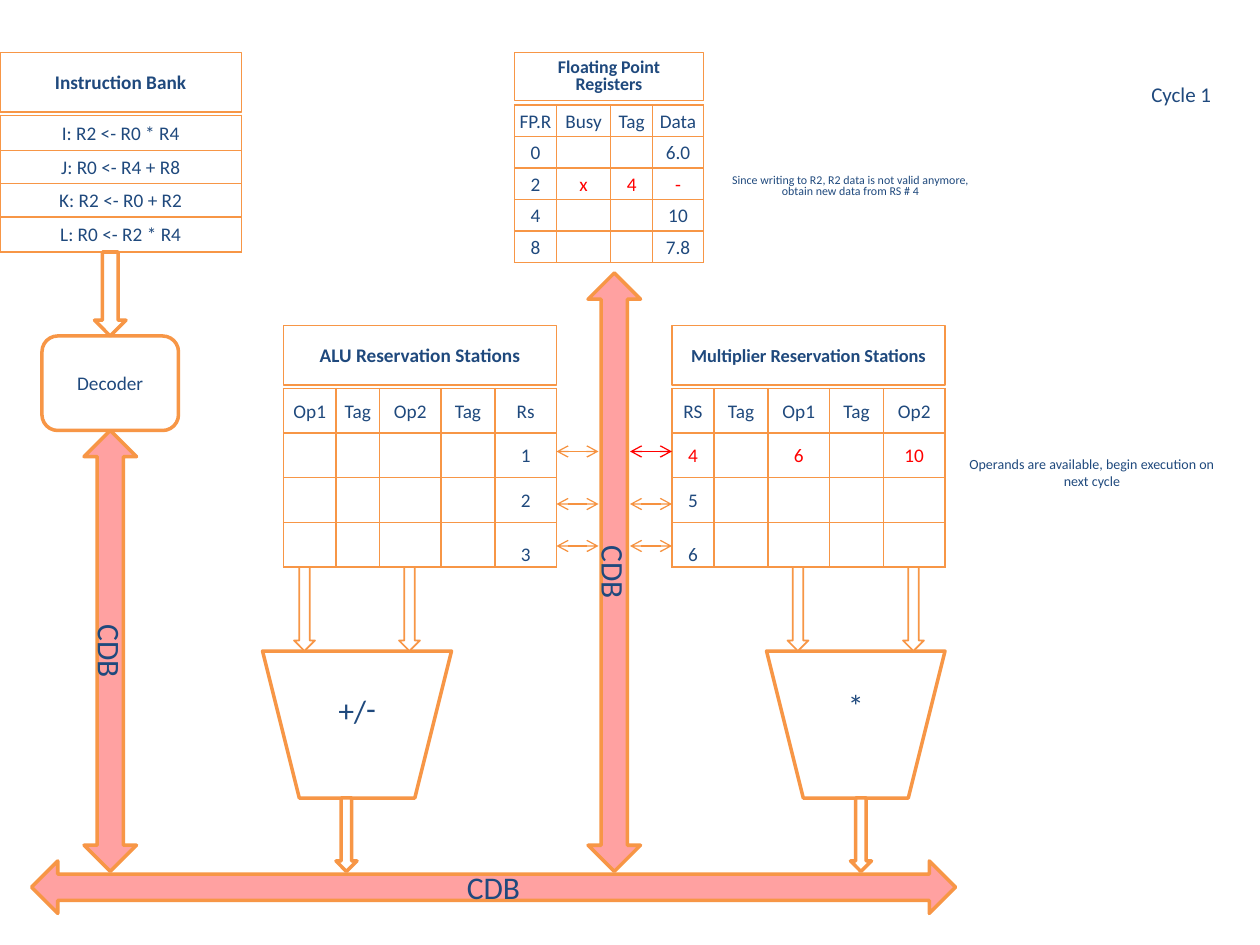
from lxml import etree
from pptx import Presentation
from pptx.dml.color import RGBColor
from pptx.enum.shapes import MSO_CONNECTOR, MSO_SHAPE
from pptx.enum.text import MSO_ANCHOR, PP_ALIGN
from pptx.oxml.ns import qn
from pptx.util import Pt

RECT = MSO_SHAPE.RECTANGLE
ROUNDED = MSO_SHAPE.ROUNDED_RECTANGLE
DOWN = MSO_SHAPE.DOWN_ARROW
DOUBLE_ARROW = MSO_SHAPE.LEFT_RIGHT_ARROW
TRAPEZOID = MSO_SHAPE.TRAPEZOID
STRAIGHT = MSO_CONNECTOR.STRAIGHT
MIDDLE, BOTTOM = MSO_ANCHOR.MIDDLE, MSO_ANCHOR.BOTTOM
CENTER = PP_ALIGN.CENTER

FONT = "Calibri"
COLORS = {"text": "1F497D", "border": "F79646", "link": "F69240",
          "active": "FF0000", "paper": "FFFFFF"}
CELL_MARGINS = {"margin_left": Pt(0.72), "margin_right": Pt(0.72),
                "margin_top": Pt(0.72), "margin_bottom": Pt(0)}
HEADER_HEIGHT = 34


def rgb(name):
    return RGBColor.from_string(COLORS[name])


def write(paragraph, text, size, color="text", bold=False, spacing=None):
    paragraph.alignment = CENTER
    paragraph.line_spacing = spacing
    run = paragraph.add_run()
    run.text = text
    run.font.color.rgb = rgb(color)
    style = {"name": FONT, "size": Pt(size), "bold": bold}
    for key, value in style.items():
        setattr(run.font, key, value)


def add_block(slide, kind, box, text="", size=11, weight=1, fill="paper",
              bold=False, spacing=None):
    block = slide.shapes.add_shape(kind, *map(Pt, box))
    block.shadow.inherit = False
    if fill:
        block.fill.solid()
        block.fill.fore_color.rgb = rgb(fill)
    else:
        block.fill.background()
    if weight:
        block.line.color.rgb = rgb("border")
        block.line.width = Pt(weight)
    else:
        block.line.fill.background()
    if text:
        frame = block.text_frame
        frame.word_wrap = True
        frame.vertical_anchor = MIDDLE
        write(frame.paragraphs[0], text, size, bold=bold, spacing=spacing)
    return block


def add_borders(cell):
    properties = cell._tc.get_or_add_tcPr()
    for position, side in enumerate(("lnL", "lnR", "lnT", "lnB")):
        edge = etree.Element(qn(f"a:{side}"), w=str(Pt(1)))
        paint = etree.SubElement(edge, qn("a:solidFill"))
        etree.SubElement(paint, qn("a:srgbClr"), val=COLORS["border"])
        properties.insert(position, edge)


def add_grid(slide, left, top, widths, heights, rows, active=(), low_row=None):
    box = (left, top, sum(widths), sum(heights))
    grid = slide.shapes.add_table(len(rows), len(widths), *map(Pt, box)).table
    grid.first_row = False
    grid.horz_banding = False
    for column, width in zip(grid.columns, widths):
        column.width = Pt(width)
    for r, (height, values) in enumerate(zip(heights, rows)):
        grid.rows[r].height = Pt(height)
        for c, value in enumerate(values):
            cell = grid.cell(r, c)
            for key, margin in CELL_MARGINS.items():
                setattr(cell, key, margin)
            cell.vertical_anchor = BOTTOM if r == low_row else MIDDLE
            cell.fill.background()
            add_borders(cell)
            paragraph = cell.text_frame.paragraphs[0]
            if value:
                color = "active" if (r, c) in active else "text"
                write(paragraph, value, 11, color)
            else:
                etree.SubElement(paragraph._p, qn("a:endParaRPr"), sz="1100")


def add_link(slide, left, y, width, color):
    link = slide.shapes.add_connector(
        STRAIGHT, Pt(left), Pt(y), Pt(left + width), Pt(y))
    link.line.color.rgb = rgb(color)
    link.line.width = Pt(0.75)
    outline = link.line._get_or_add_ln()
    for end in ("headEnd", "tailEnd"):
        etree.SubElement(outline, qn(f"a:{end}"), type="arrow")
    etree.SubElement(link._element.spPr, qn("a:effectLst"))


def add_bus(slide, box):
    left, top, width, height = box
    vertical = height > width
    if vertical:
        shift = (height - width) / 2
        box = (left - shift, top + shift, height, width)
    bus = add_block(slide, DOUBLE_ARROW, box, "CDB", 18, 2, "active")
    bus.rotation = 90 if vertical else 0
    tint = bus._element.spPr.find(qn("a:solidFill"))[0]
    etree.SubElement(tint, qn("a:alpha"), val="37000")


def add_instruction_path(slide, box):
    left, top, width, _ = box
    add_block(slide, RECT, (left, top, width, HEADER_HEIGHT),
              "Instruction Bank", bold=True)
    instructions = ["I: R2 <- R0 * R4", "J: R0 <- R4 + R8",
                    "K: R2 <- R0 + R2", "L: R0 <- R2 * R4"]
    add_grid(slide, left, top + 36, [width], [20, 19, 19, 20],
             [[instruction] for instruction in instructions])
    add_block(slide, ROUNDED, (left + 24, top + 162, 78, 54), "Decoder", weight=2)
    add_block(slide, DOWN, (left + 54, top + 114, 18, 48), weight=2, fill=None)


def add_registers(slide, box):
    left, top, width, _ = box
    add_block(slide, RECT, (left, top, width, 27.5), "Floating Point Registers",
              10.2, bold=True, spacing=0.8)
    rows = [["FP.R", "Busy", "Tag", "Data"], ["0", "", "", "6.0"],
            ["2", "x", "4", "-"], ["4", "", "", "10"], ["8", "", "", "7.8"]]
    add_grid(slide, left, top + 30, [24, 31, 24, 29], [18] * 5, rows,
             active={(2, 1), (2, 2), (2, 3)})


def add_stations(slide, box, title, size, widths, rows, link_offset, active_row=None):
    left, top, width, _ = box
    add_block(slide, RECT, (left, top, width, HEADER_HEIGHT), title, size, bold=True)
    active = {(active_row, column) for column in range(len(widths))}
    add_grid(slide, left, top + 36, widths, [25.5] * 4, rows, active, low_row=3)
    for row, drop in enumerate((72, 102, 126), start=1):
        color = "active" if row == active_row else "link"
        add_link(slide, left + link_offset, top + drop, 24, color)


def add_unit(slide, box, symbol, inputs, output, symbol_inset=3.6):
    left, top, _, height = box
    unit = add_block(slide, TRAPEZOID, box, symbol, 18, 2)
    unit.rotation = 180
    unit.text_frame.margin_top = Pt(symbol_inset)
    for offset in inputs:
        add_block(slide, DOWN, (left + offset, top - 48, 12, 48))
    add_block(slide, DOWN, (left + output, top + height, 12, 42), weight=2)


def add_note(slide, box, text, size, spacing=None):
    add_block(slide, RECT, box, text, size, weight=0, spacing=spacing)


def main():
    deck = Presentation()
    deck.slide_width, deck.slide_height = Pt(720), Pt(540)
    slide = deck.slides.add_slide(deck.slide_layouts[6])

    for bus in ((336, 156, 30, 342), (18, 492, 528, 30), (48, 246, 30, 252)):
        add_bus(slide, bus)
    add_unit(slide, (150, 372, 108, 84), "-/+", (18, 78), 42)
    add_unit(slide, (438, 372, 102, 84), "*", (12, 78), 48, symbol_inset=25.6)
    add_stations(slide, (162, 186, 156, 138), "ALU Reservation Stations", 11,
                 [30, 25, 35, 31, 35],
                 [["Op1", "Tag", "Op2", "Tag", "Rs"]]
                 + [["", "", "", "", number] for number in "123"], 156)
    add_stations(slide, (384, 186, 156, 138), "Multiplier Reservation Stations", 10.5,
                 [24, 31, 35, 31, 35],
                 [["RS", "Tag", "Op1", "Tag", "Op2"], ["4", "", "6", "", "10"],
                  ["5", "", "", "", ""], ["6", "", "", "", ""]], -24, active_row=1)
    add_instruction_path(slide, (0, 30, 138, 216))
    add_registers(slide, (294, 30, 108, 120))
    add_note(slide, (408, 96, 156, 21.5),
             "Since writing to R2, R2 data is not valid anymore, "
             "obtain new data from RS # 4", 6.8, 0.8)
    add_note(slide, (630, 30, 90, 48), "Cycle 1", 12)
    add_note(slide, (546, 252, 156, 36),
             "Operands are available, begin execution on next cycle", 8)
    deck.save("out.pptx")


if __name__ == "__main__":
    main()
